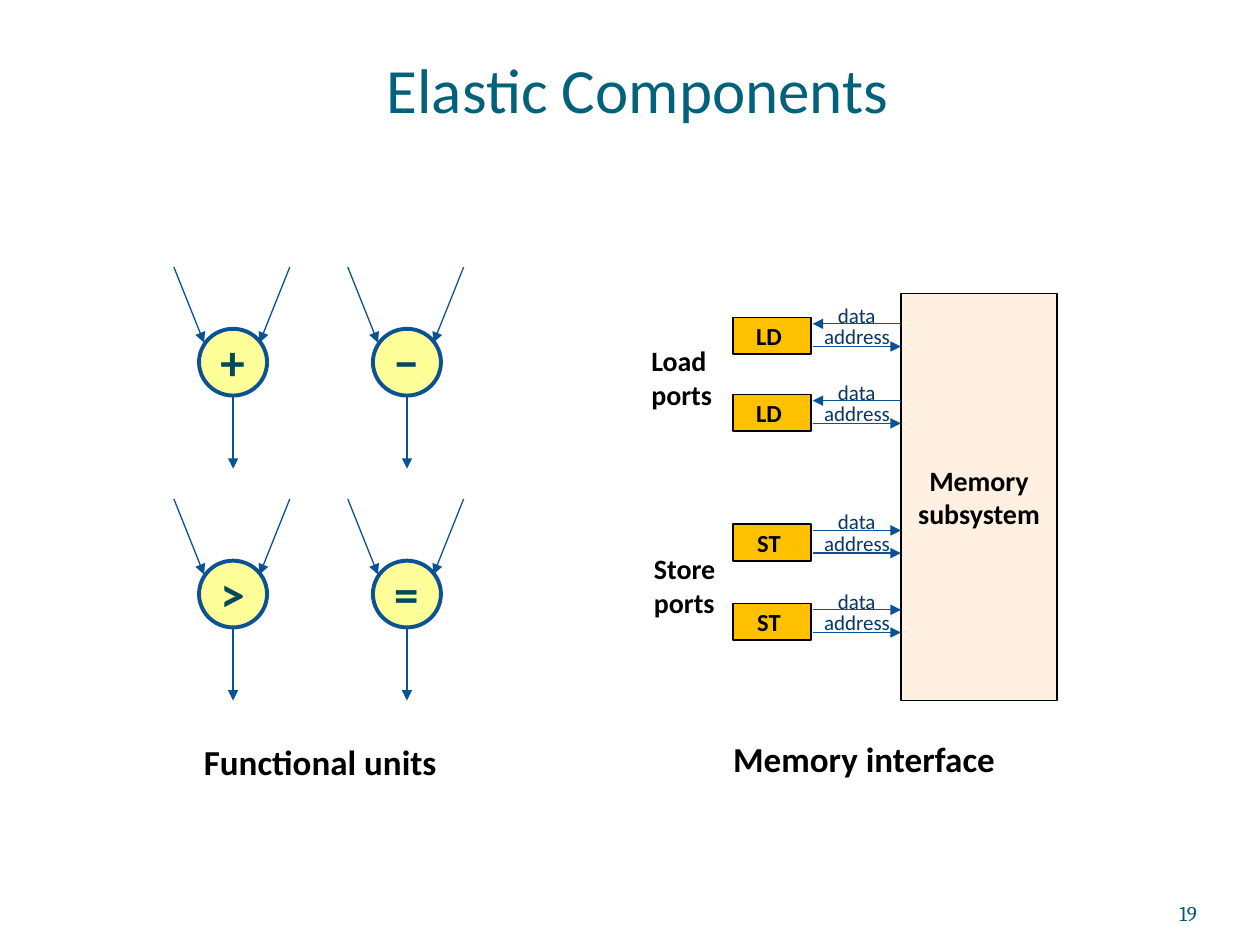
from lxml import etree
from pptx import Presentation
from pptx.dml.color import RGBColor
from pptx.enum.shapes import MSO_CONNECTOR, MSO_SHAPE
from pptx.enum.text import MSO_ANCHOR, PP_ALIGN
from pptx.oxml.ns import qn
from pptx.util import Inches, Pt

STRAIGHT = MSO_CONNECTOR.STRAIGHT
RECTANGLE, OVAL = MSO_SHAPE.RECTANGLE, MSO_SHAPE.OVAL
TOP, MIDDLE, BOTTOM = MSO_ANCHOR.TOP, MSO_ANCHOR.MIDDLE, MSO_ANCHOR.BOTTOM
LEFT, CENTER, RIGHT = PP_ALIGN.LEFT, PP_ALIGN.CENTER, PP_ALIGN.RIGHT

COLORS = {
    "title": "04617B", "number": "045D75", "text": "000000", "signal": "083763",
    "operator": "03495C", "arrow": "095295", "ring": "0B5292", "unit": "FFFF99",
    "port": "FFC000", "memory": "FFF0E1",
}
GRID_COLUMNS, GRID_ROWS = 100, 75
CELL = Inches(10) // GRID_COLUMNS
INSETS = (1, 0.5, 1, 0.5)
INDENTED = (6, 0.5, 1, 0.5)
NO_INSETS = (0, 0, 0, 0)


def cells(*lengths):
    """Convert grid lengths to slide units."""
    return [round(length * CELL) for length in lengths]


def color(name):
    """Look up a named colour."""
    return RGBColor.from_string(COLORS[name])


def write(shape, text, size, ink="text", bold=False, align=LEFT, anchor=TOP,
          insets=INSETS, font="Calibri"):
    """Fill a shape with one formatted paragraph."""
    frame = shape.text_frame
    frame.text = text
    frame.word_wrap = True
    frame.vertical_anchor = anchor
    (frame.margin_left, frame.margin_top,
     frame.margin_right, frame.margin_bottom) = cells(*insets)
    paragraph = frame.paragraphs[0]
    paragraph.alignment = align
    style = paragraph.runs[0].font
    style.name, style.size, style.bold = font, Pt(size), bold
    style.color.rgb = color(ink)


def add_label(slide, box, text, size, **style):
    """Add a text box."""
    write(slide.shapes.add_textbox(*cells(*box)), text, size, **style)


def add_block(slide, kind, box, fill, line="text", width=1):
    """Add a filled and outlined shape."""
    shape = slide.shapes.add_shape(kind, *cells(*box))
    shape.shadow.inherit = False
    shape.fill.solid()
    shape.fill.fore_color.rgb = color(fill)
    shape.line.color.rgb = color(line)
    shape.line.width = Pt(width)
    return shape


def add_arrow(slide, start, end):
    """Add a thin arrow pointing at its end."""
    arrow = slide.shapes.add_connector(STRAIGHT, *cells(*start, *end))
    arrow.line.color.rgb = color("arrow")
    arrow.line.width = Pt(0.75)
    properties = arrow.line._get_or_add_ln()
    etree.SubElement(properties, qn("a:tailEnd"), type="triangle")
    etree.SubElement(properties.getparent(), qn("a:effectLst"))


def add_functional_unit(slide, left, top, operator):
    """Draw an operator with two inputs and one output."""
    for start, end in (((4.7, 10), (4.7, 16)), ((9.2, 0), (6.8, 6)), ((0, 0), (2.4, 6))):
        add_arrow(slide, (left + start[0], top + start[1]), (left + end[0], top + end[1]))
    add_block(slide, OVAL, (left + 2, top + 4.9, 5.4, 5.3), "unit", "ring", 2.25)
    add_label(slide, (left + 2.7, top + 4.6, 4.3, 5.7), operator, 28,
              ink="operator", bold=True)


def add_functional_units(slide, left, top):
    """Draw the two by two grid of operators and its caption."""
    for index, operator in enumerate("+−>="):
        row, column = divmod(index, 2)
        add_functional_unit(slide, left + 13.8 * column, top + 18.4 * row, operator)
    add_label(slide, (left + 1.4, top + 37.1, 22, 10.2), "Functional units", 20, bold=True)


def add_port(slide, left, top, name, data_returns):
    """Draw a port with its data and address signals."""
    near, far = left + 6.35, left + 13.35
    data_ends = [(near, top + 0.5), (far, top + 0.5)]
    add_arrow(slide, *(reversed(data_ends) if data_returns else data_ends))
    add_arrow(slide, (near, top + 2.3), (far, top + 2.3))
    for signal, x, y in (("data", 2.35, -1.7), ("address", 1.25, 0)):
        add_label(slide, (left + x, top + y, 13.9, 3), signal, 12,
                  ink="signal", insets=INDENTED)
    port = add_block(slide, RECTANGLE, (left, top, 6.2, 2.9), "port")
    write(port, name, 14, bold=True, align=CENTER, anchor=MIDDLE, insets=NO_INSETS)


def add_memory_interface(slide, left, top):
    """Draw the memory, its load and store ports and the caption."""
    memory = add_block(slide, RECTANGLE, (left + 25.8, top, 12.4, 32.3), "memory")
    write(memory, "Memory subsystem", 16, bold=True, align=CENTER, anchor=MIDDLE)
    for text, x, y, width, height in (("Load ports", 0, 3.5, 16.6, 9.1),
                                      ("Store ports", 0.2, 20, 13.9, 6.4)):
        add_label(slide, (left + x, top + y, width, height), text, 16,
                  bold=True, insets=INDENTED)
    for name, y in (("LD ", 1.9), ("LD ", 8), ("ST ", 18.3), ("ST ", 24.6)):
        add_port(slide, left + 12.45, top + y, name, name == "LD ")
    add_label(slide, (left + 11.5, top + 34.7, 27.4, 10.2), "Memory interface", 20, bold=True)


def add_frame(slide):
    """Add the title and the slide number."""
    add_label(slide, (1.6, -2.5, 98, 12.5), "Elastic Components", 36, ink="title",
              align=CENTER, anchor=BOTTOM, insets=(0, 0.5, 0, 0))
    add_label(slide, (86.7, 69.5, 8.3, 4), "19", 12, ink="number", align=RIGHT,
              anchor=BOTTOM, insets=NO_INSETS, font="Cambria")


def main():
    """Build and save the presentation."""
    presentation = Presentation()
    presentation.slide_width, presentation.slide_height = cells(GRID_COLUMNS, GRID_ROWS)
    slide = presentation.slides.add_slide(presentation.slide_layouts[6])
    add_memory_interface(slide, 45.7, 23.3)
    add_frame(slide)
    add_functional_units(slide, 13.8, 21.2)
    presentation.save("out.pptx")


if __name__ == "__main__":
    main()
